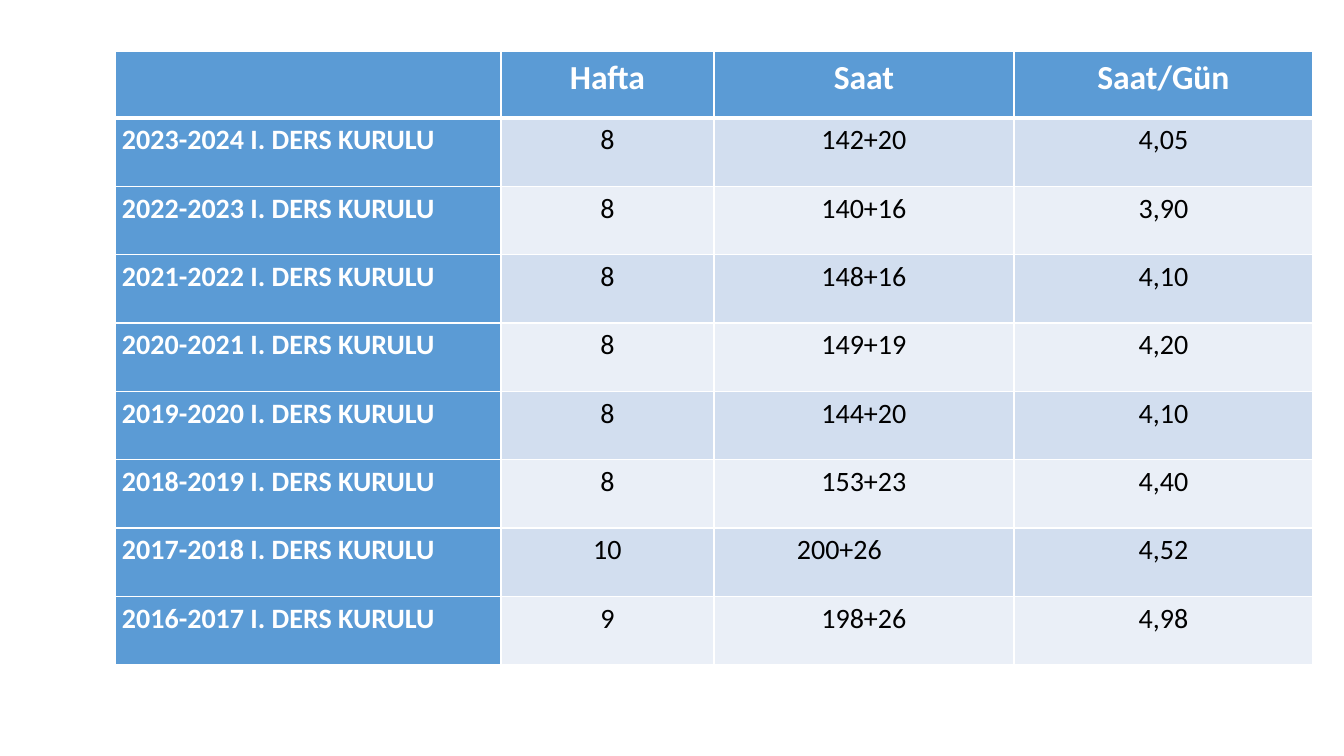
import pptx
import pptx.util
import pptx.dml.color
import pptx.enum.text
import pptx.oxml
import pptx.oxml.ns

HEADERS = ["", "Hafta", "Saat", "Saat/Gün"]
BOARDS = [
    ("2023-2024 I. DERS KURULU", "8", "142+20", "4,05"),
    ("2022-2023 I. DERS KURULU", "8", "140+16", "3,90"),
    ("2021-2022 I. DERS KURULU", "8", "148+16", "4,10"),
    ("2020-2021 I. DERS KURULU", "8", "149+19", "4,20"),
    ("2019-2020 I. DERS KURULU", "8", "144+20", "4,10"),
    ("2018-2019 I. DERS KURULU", "8", "153+23", "4,40"),
    ("2017-2018 I. DERS KURULU", "10", "200+26", "4,52"),
    ("2016-2017 I. DERS KURULU", "9", "198+26", "4,98"),
]
LEFT_SET = (7, 2)  # the one value cell that is left-aligned with an indent
LEFT_SET_MARGIN = 83

SLIDE_W, SLIDE_H = 1344, 756
LEFT, TOP = 115, 51
COL_WIDTHS = [386, 213, 300, 299]
HEADER_H, BODY_H = 67, 547
SIDE_MARGIN = 7
FONT = "Calibri"

BLUE = pptx.dml.color.RGBColor(0x5B, 0x9B, 0xD5)
BAND_DARK = pptx.dml.color.RGBColor(0xD2, 0xDE, 0xEF)
BAND_LIGHT = pptx.dml.color.RGBColor(0xEA, 0xEF, 0xF7)
WHITE = pptx.dml.color.RGBColor(0xFF, 0xFF, 0xFF)
BLACK = pptx.dml.color.RGBColor(0, 0, 0)

ALIGN = pptx.enum.text.PP_ALIGN


def px(n):
    return pptx.util.Emu(round(n * 914400 / 100.8))


def add_borders(cell, top, bottom):
    """White borders; top and bottom widths in points, sides 1 pt."""
    tcPr = cell._tc.get_or_add_tcPr()
    for side, width in (("L", 1), ("R", 1), ("T", top), ("B", bottom)):
        tcPr.append(pptx.oxml.parse_xml(
            f'<a:ln{side} {pptx.oxml.ns.nsdecls("a")} w="{pptx.util.Pt(width)}">'
            f'<a:solidFill><a:srgbClr val="{WHITE}"/></a:solidFill></a:ln{side}>'))


def fill_cell(cell, text, row, col):
    heading = row == 0 or col == 0
    add_borders(cell, top=3 if row == 1 else 1, bottom=3 if row == 0 else 1)
    cell.fill.solid()
    cell.fill.fore_color.rgb = BLUE if heading else BAND_DARK if row % 2 else BAND_LIGHT
    cell.margin_left = cell.margin_right = px(SIDE_MARGIN)
    cell.margin_top = cell.margin_bottom = 0

    p = cell.text_frame.paragraphs[0]
    p.text = text
    p.line_spacing = 1.15
    p.alignment = ALIGN.JUSTIFY if col == 0 else ALIGN.CENTER
    if (row, col) == LEFT_SET:
        p.alignment = ALIGN.LEFT
        cell.margin_left = px(LEFT_SET_MARGIN)
    for r in p.runs:
        r.font.name = FONT
        r.font.size = pptx.util.Pt(24 if row == 0 else 20)
        r.font.bold = heading
        r.font.color.rgb = WHITE if heading else BLACK


def main():
    prs = pptx.Presentation()
    prs.slide_width, prs.slide_height = px(SLIDE_W), px(SLIDE_H)
    s = prs.slides.add_slide(prs.slide_layouts[6])

    rows = [HEADERS] + BOARDS
    table = s.shapes.add_table(len(rows), len(HEADERS), px(LEFT), px(TOP),
                               px(sum(COL_WIDTHS)), px(HEADER_H + BODY_H)).table
    for column, width in zip(table.columns, COL_WIDTHS):
        column.width = px(width)
    for i, values in enumerate(rows):
        table.rows[i].height = px(BODY_H / len(BOARDS) if i else HEADER_H)
        for j, text in enumerate(values):
            fill_cell(table.cell(i, j), text, i, j)

    prs.save("out.pptx")


if __name__ == "__main__":
    main()
